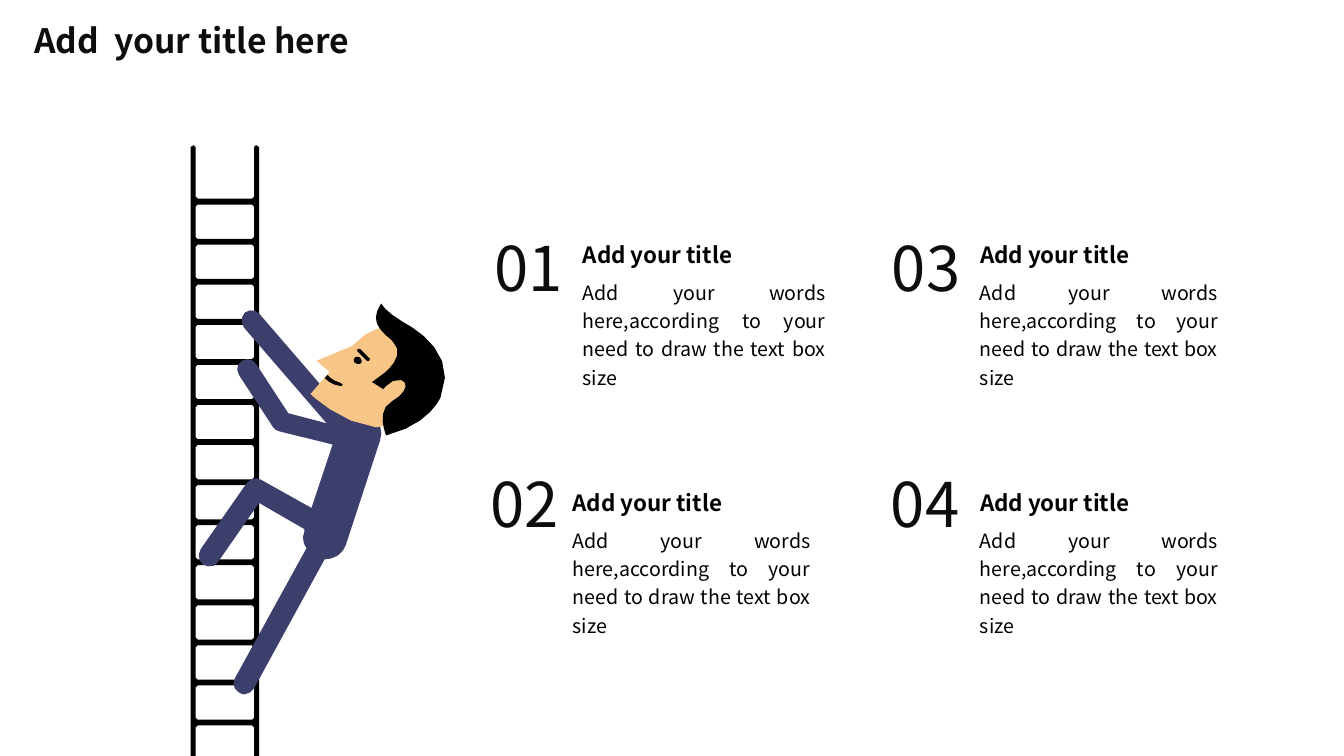
from math import dist

from pptx import Presentation
from pptx.dml.color import RGBColor
from pptx.enum import text
from pptx.util import Inches, Pt

FONT = "Noto Sans CJK JP"
INK = RGBColor(0x0D, 0x0D, 0x0D)
BLACK = RGBColor(0x00, 0x00, 0x00)
COAL = RGBColor(0x01, 0x01, 0x01)
NAVY = RGBColor(0x3C, 0x3E, 0x6C)
SKIN = RGBColor(0xF7, 0xC5, 0x86)

HEADING = "Add your title"
WORDS = "Add your words here,according to your need to draw the text box size"

# Number, its left and top, then left, top and width of the words
ITEMS = [
    ("01 ", 4.84, 2.25, 5.78, 2.39, 2.41),
    ("02 ", 4.8, 4.59, 5.68, 4.85, 2.36),
    ("03 ", 8.78, 2.25, 9.72, 2.39, 2.36),
    ("04 ", 8.77, 4.59, 9.72, 4.85, 2.36),
]

# Outlines: a pair is a straight step, six numbers are a Bézier curve
BODY = [
    (3.64, 4.09), (3.56, 4.07, 3.49, 4.09, 3.44, 4.12),
    (2.57, 3.11), (2.54, 3.07, 2.47, 3.07, 2.43, 3.1),
    (2.39, 3.14, 2.39, 3.2, 2.42, 3.25), (3.24, 4.2), (2.86, 4.1),
    (2.54, 3.61), (2.51, 3.56, 2.45, 3.55, 2.4, 3.58),
    (2.35, 3.61, 2.34, 3.67, 2.37, 3.72), (2.71, 4.24),
    (2.72, 4.26, 2.74, 4.27, 2.77, 4.28), (3.3, 4.41), (3.09, 5.04),
    (2.59, 4.76), (2.54, 4.73, 2.48, 4.75, 2.45, 4.79),
    (1.99, 5.45), (1.96, 5.5, 1.97, 5.56, 2.01, 5.6),
    (2.06, 5.63, 2.13, 5.63, 2.16, 5.58), (2.57, 4.99), (3.02, 5.25),
    (3.02, 5.27), (2.99, 5.33, 3.01, 5.4, 3.04, 5.44),
    (2.33, 6.73), (2.3, 6.78, 2.32, 6.84, 2.37, 6.87),
    (2.39, 6.88, 2.41, 6.89, 2.42, 6.89),
    (2.46, 6.89, 2.5, 6.86, 2.52, 6.83),
    (3.22, 5.55), (3.31, 5.55, 3.4, 5.5, 3.43, 5.41),
    (3.77, 4.37), (3.81, 4.26, 3.75, 4.13, 3.64, 4.09),
]
FACE = [
    (3.5, 3.43), (3.53, 3.4), (3.7, 3.21, 3.98, 3.19, 4.16, 3.36),
    (4.39, 3.57, 4.4, 3.84, 4.24, 4.03),
    (3.76, 4.57, 3.08, 3.91, 3.08, 3.91), (3.27, 3.69), (3.14, 3.58),
]
HAIR = [
    (3.8, 3.71), (3.8, 3.71, 4.05, 3.53, 3.89, 3.38),
    (3.73, 3.25, 3.68, 3.17, 3.78, 3.01),
    (3.78, 3.01, 3.82, 3.09, 3.99, 3.19),
    (4.16, 3.28, 4.54, 3.53, 4.37, 3.94),
    (4.37, 3.94, 4.27, 4.21, 3.83, 4.32),
    (3.83, 4.32, 3.72, 4.07, 3.89, 3.98),
    (4.03, 3.9, 4.06, 3.8, 3.98, 3.77),
    (3.9, 3.74, 3.8, 3.86, 3.8, 3.86), (3.69, 3.79),
]
EYE = [(3.53, 3.54), (3.51, 3.56), (3.51, 3.59), (3.54, 3.61), (3.57, 3.61),
       (3.59, 3.59), (3.58, 3.56), (3.56, 3.54)]
BROW = [(3.55, 3.46), (3.54, 3.48), (3.64, 3.58), (3.66, 3.58), (3.67, 3.56),
        (3.57, 3.46)]
MOUTH = [(3.4, 3.82), (3.38, 3.8), (3.31, 3.78, 3.26, 3.74, 3.25, 3.72),
         (3.22, 3.75), (3.26, 3.79, 3.3, 3.82, 3.38, 3.83)]


def flatten(outline):
    """Turn straight steps and curves into a short list of points."""
    points = [outline[0]]
    for part in outline[1:]:
        if len(part) == 2:
            points.append(part)
            continue
        corners = [points[-1], part[:2], part[2:4], part[4:]]
        length = sum(dist(a, b) for a, b in zip(corners, corners[1:]))
        steps = min(6, 1 + round(length / 0.1))
        for step in range(1, steps + 1):
            t = step / steps
            weights = ((1 - t) ** 3, 3 * t * (1 - t) ** 2, 3 * t * t * (1 - t), t ** 3)
            points.append(tuple(
                sum(w * corner[axis] for w, corner in zip(weights, corners))
                for axis in (0, 1)))
    return points


def add_outline(page, color, *outlines):
    """Draw one filled shape; later outlines are holes in the first."""
    builder = None
    for outline in outlines:
        points = [(Inches(x), Inches(y)) for x, y in flatten(outline)]
        if builder is None:
            builder = page.shapes.build_freeform(*points[0], scale=1.0)
        else:
            builder.move_to(*points[0])
        builder.add_line_segments(points[1:], close=True)
    shape = builder.convert_to_shape()
    shape.shadow.inherit = False
    shape.fill.solid()
    shape.fill.fore_color.rgb = color
    shape.line.fill.background()


def cut_corners(left, top, right, bottom, cut=0.02):
    return [(left + cut, top), (right - cut, top), (right, top + cut),
            (right, bottom - cut), (right - cut, bottom), (left + cut, bottom),
            (left, bottom - cut), (left, top + cut)]


def add_ladder(page):
    left_half = [(1.96, 1.97), (1.94, 1.95), (1.94, 1.46), (1.92, 1.44),
                 (1.89, 1.46), (1.89, 9.25), (1.57, 9.25), (1.57, 9.31),
                 (1.94, 9.31), (1.94, 8.79)]
    # The right rail mirrors the left one
    right_half = [(4.46 - x, y) for x, y in reversed(left_half)]
    gaps = [cut_corners(1.94, top, 2.52, top + 0.34)
            for top in (2.03 + 0.3975 * step for step in range(17))]
    add_outline(page, COAL, left_half + right_half, *gaps)


def write(box, words, size, color=BLACK, bold=False, align=text.PP_ALIGN.LEFT,
          anchor=text.MSO_ANCHOR.TOP, margins=(0, 0), before=0.0, spacing=1.0):
    frame = box.text_frame
    frame.text = words
    frame.word_wrap = True
    frame.auto_size = text.MSO_AUTO_SIZE.SHAPE_TO_FIT_TEXT
    frame.vertical_anchor = anchor
    frame.margin_left = frame.margin_right = Inches(margins[0])
    frame.margin_top = frame.margin_bottom = Inches(margins[1])
    para = frame.paragraphs[0]
    para.alignment = align
    para.line_spacing = spacing
    para.space_before = Pt(before * size)
    font = para.runs[0].font
    font.name, font.size, font.bold = FONT, Pt(size), bold
    font.color.rgb = color


def add_text(page, left, top, width, height, words, size, **style):
    box = page.shapes.add_textbox(Inches(left), Inches(top), Inches(width), Inches(height))
    write(box, words, size, **style)


def add_title(page, words):
    title = page.shapes.title
    title.left, title.top = Inches(0.24), Inches(0.15)
    title.width, title.height = Inches(3.75), Inches(0.5)
    write(title, words, 24, color=INK, bold=True, margins=(0.1, 0.05))


def add_item(page, number, number_left, number_top, left, top, width):
    add_text(page, number_left, number_top, 0.95, 0.79, number, 44, color=INK,
             align=text.PP_ALIGN.CENTER, anchor=text.MSO_ANCHOR.MIDDLE,
             margins=(0.05, 0.02))
    add_text(page, left, top + 0.35, width, 1.13, WORDS, 14,
             align=text.PP_ALIGN.JUSTIFY, before=0.2, spacing=1.2)
    add_text(page, left, top, 3.01, 0.27, HEADING, 16, bold=True, before=0.2)


def main():
    deck = Presentation()
    deck.slide_width, deck.slide_height = Inches(13.33), Inches(7.5)
    page = deck.slides.add_slide(deck.slide_layouts[5])
    add_title(page, "Add  your title here")

    # Climber on the ladder
    add_ladder(page)
    for color, outline in ((NAVY, BODY), (SKIN, FACE), (COAL, HAIR),
                           (COAL, EYE), (COAL, BROW), (COAL, MOUTH)):
        add_outline(page, color, outline)

    # Numbered texts
    for item in ITEMS:
        add_item(page, *item)
    deck.save("out.pptx")


if __name__ == "__main__":
    main()
